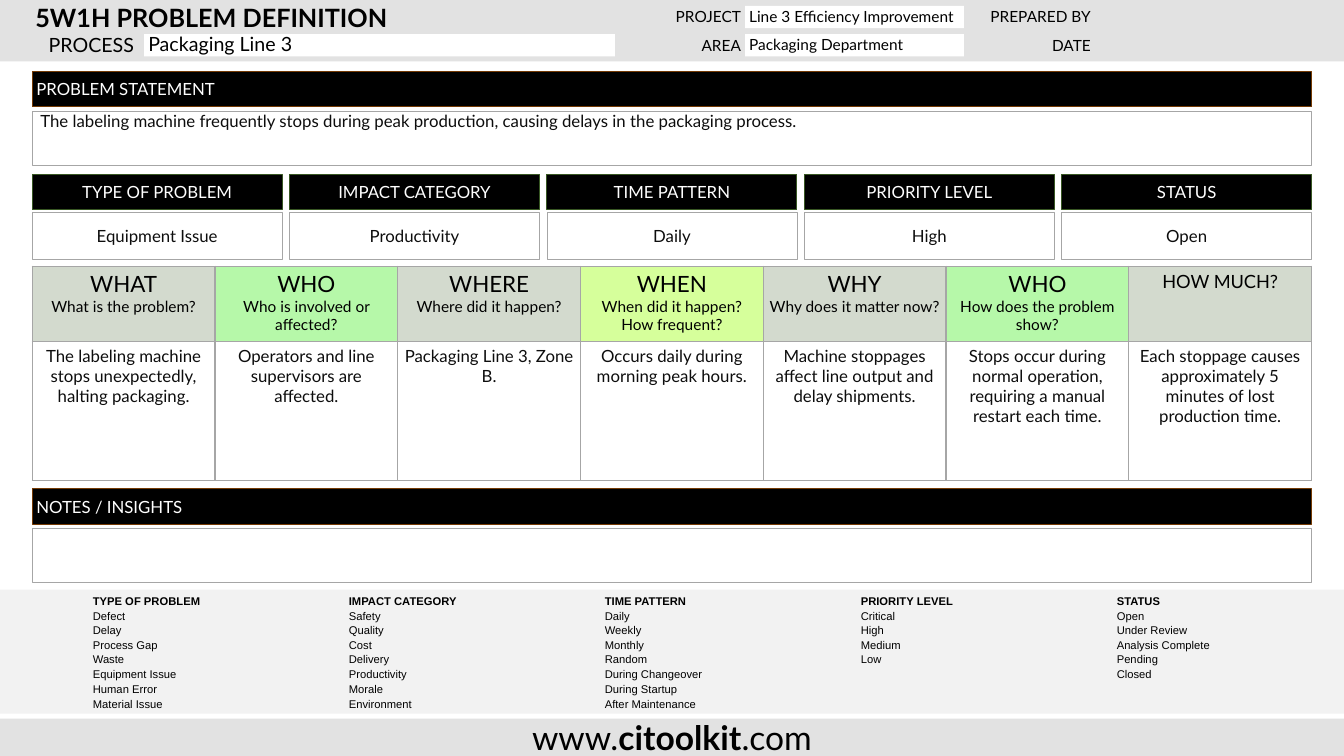
from itertools import zip_longest
from lxml.etree import SubElement
from pptx import Presentation
from pptx.dml.color import RGBColor
from pptx.enum.shapes import MSO_SHAPE as Shape
from pptx.enum.text import MSO_ANCHOR as Anchor, PP_ALIGN as Align
from pptx.oxml.ns import qn
from pptx.util import Inches, Pt

BLACK = RGBColor(0, 0, 0)
WHITE = RGBColor(255, 255, 255)
INK = RGBColor(0x0D, 0x0D, 0x0D)
BAND = RGBColor(0xE2, 0xE2, 0xE2)
PALE = RGBColor(0xF2, 0xF2, 0xF2)
GRAY = RGBColor(0xA6, 0xA6, 0xA6)
BROWN = RGBColor(0x74, 0x3A, 0x04)
PINE = RGBColor(0x38, 0x57, 0x23)
SAGE = RGBColor(0xD3, 0xDA, 0xCE)
MINT = RGBColor(0xB6, 0xF8, 0xA9)
LIME = RGBColor(0xD6, 0xFF, 0x9B)

WIDE, HIGH = Inches(13.33), Inches(7.5)
LEFT, SPAN = 2.4, 95.2
PLAIN = "{2D5ABB26-0587-4C30-8999-92F81FD0307C}"

FIELDS = [
    ("TYPE OF PROBLEM", "Equipment Issue"),
    ("IMPACT CATEGORY", "Productivity"),
    ("TIME PATTERN", "Daily"),
    ("PRIORITY LEVEL", "High"),
    ("STATUS", "Open"),
]
ASKS = [
    (SAGE, "WHAT", "What is the problem?",
     "The labeling machine stops unexpectedly, halting packaging."),
    (MINT, "WHO", "Who is involved or affected?",
     "Operators and line supervisors are affected."),
    (SAGE, "WHERE", "Where did it happen?", "Packaging Line 3, Zone B."),
    (LIME, "WHEN", "When did it happen? How frequent?",
     "Occurs daily during morning peak hours."),
    (SAGE, "WHY", "Why does it matter now?",
     "Machine stoppages affect line output and delay shipments."),
    (MINT, "WHO", "How does the problem show?",
     "Stops occur during normal operation, requiring a manual restart each time."),
    (SAGE, "HOW MUCH?", "",
     "Each stoppage causes approximately 5 minutes of lost production time."),
]
LISTS = [
    ["Defect", "Delay", "Process Gap", "Waste", "Equipment Issue",
     "Human Error", "Material Issue"],
    ["Safety", "Quality", "Cost", "Delivery", "Productivity", "Morale",
     "Environment"],
    ["Daily", "Weekly", "Monthly", "Random", "During Changeover",
     "During Startup", "After Maintenance"],
    ["Critical", "High", "Medium", "Low"],
    ["Open", "Under Review", "Analysis Complete", "Pending", "Closed"],
]


def across(share):
    return round(WIDE * share / 100)


def down(share):
    return round(HIGH * share / 100)


def place(x, y, w, h):
    return across(x), down(y), across(w), down(h)


def inset(frame, left, top, right, base):
    frame.margin_left, frame.margin_top = Inches(left), Inches(top)
    frame.margin_right, frame.margin_bottom = Inches(right), Inches(base)


def style(para, size, color=BLACK, align=Align.LEFT, bold=False, face="Lato"):
    para.alignment = align
    for run in para.runs:
        font = run.font
        font.name, font.size, font.bold = face, Pt(size), bold
        font.color.rgb = color


def panel(slide, spot, fill, edge=None, width=0.75, clear=False):
    shape = slide.shapes.add_shape(Shape.RECTANGLE, *place(*spot))
    shape.shadow.inherit = False
    shape.fill.solid()
    shape.fill.fore_color.rgb = fill
    if clear:
        tone = shape.fill._xPr.find(qn("a:solidFill"))[0]
        SubElement(tone, qn("a:alpha"), val="20000")
    if edge is None:
        shape.line.fill.background()
    else:
        shape.line.color.rgb = edge
        shape.line.width = Pt(width)
    return shape


def write(shape, text, size, color=BLACK, align=Align.LEFT, bold=False):
    frame = shape.text_frame
    frame.word_wrap = True
    frame.vertical_anchor = Anchor.MIDDLE
    inset(frame, 0.04, 0.04, 0.04, 0.04)
    frame.text = text
    style(frame.paragraphs[0], size, color, align, bold)
    return frame


def label(slide, spot, text, size, align=Align.RIGHT, bold=False):
    box = slide.shapes.add_textbox(*place(*spot))
    write(box, text, size, align=align, bold=bold)


def entry(slide, spot, text, size):
    frame = write(panel(slide, spot, WHITE), text, size)
    frame.paragraphs[0].line_spacing = 0.9


def title(slide, spot, text, edge, align=Align.LEFT):
    write(panel(slide, spot, BLACK, edge), text, 12, WHITE, align)


def field(slide, spot):
    return panel(slide, spot, WHITE, GRAY, 0.5, True)


def grid(slide, x, y, cols, rows):
    spot = place(x, y, sum(cols), sum(rows))
    table = slide.shapes.add_table(len(rows), len(cols), *spot).table
    table.first_row = table.horz_banding = False
    table._tbl.tblPr.find(qn("a:tableStyleId")).text = PLAIN
    for col, share in zip(table.columns, cols):
        col.width = across(share)
    for row, share in zip(table.rows, rows):
        row.height = down(share)
    return table


def border(cell):
    props = cell._tc.get_or_add_tcPr()
    for n, side in enumerate(("lnL", "lnR", "lnT", "lnB")):
        line = props.makeelement(qn("a:" + side), {"w": "12700"})
        fill = SubElement(line, qn("a:solidFill"))
        SubElement(fill, qn("a:srgbClr"), val=str(GRAY))
        props.insert(n, line)


def block(cell, fill, text):
    inset(cell, 0.04, 0.04, 0.04, 0.04)
    cell.fill.solid()
    cell.fill.fore_color.rgb = fill
    border(cell)
    cell.text_frame.text = text
    return cell.text_frame.paragraphs[0]


def asks(slide):
    table = grid(slide, LEFT, 35.2, [SPAN / 7] * 7, [10, 18.4])
    for n, (fill, word, hint, reply) in enumerate(ASKS):
        head = table.cell(0, n)
        style(block(head, fill, word), 16 if hint else 13, align=Align.CENTER)
        if hint:
            para = head.text_frame.add_paragraph()
            para.text = hint
            style(para, 11, align=Align.CENTER)
        style(block(table.cell(1, n), WHITE, reply), 12, INK, Align.CENTER)


def choices(slide):
    table = grid(slide, 6.83, 78.53, [19.05] * 4 + [10.2], [1.83] * 5 + [2] * 3)
    heads = [name for name, _ in FIELDS]
    for r, row in enumerate([heads, *zip_longest(*LISTS, fillvalue="")]):
        for c, text in enumerate(row):
            cell = table.cell(r, c)
            inset(cell, 0.01, 0.01, 0.01, 0)
            cell.vertical_anchor = Anchor.BOTTOM
            cell.fill.background()
            para = cell.text_frame.paragraphs[0]
            para.text = text
            style(para, 8, bold=r == 0, face="Arial")
            if not text:
                SubElement(para._p, qn("a:endParaRPr"), sz="800")


def header(slide):
    panel(slide, (0, 0, 100, 8.13), BAND)
    label(slide, (2.33, 0, 43.44, 4.53), "5W1H PROBLEM DEFINITION", 18,
          Align.LEFT, True)
    label(slide, (1.13, 4.4, 9.15, 3.07), "PROCESS", 14)
    entry(slide, (10.73, 4.53, 35.03, 2.93), "Packaging Line 3", 14)
    rows = [("PROJECT", "Line 3 Efficiency Improvement", "PREPARED BY"),
            ("AREA", "Packaging Department", "DATE")]
    for n, (name, value, sign) in enumerate(rows):
        y = 0.67 + 3.73 * n
        label(slide, (46.29, y, 9.15, 3.07), name, 11)
        entry(slide, (55.44, y + 0.13, 16.28, 2.93), value, 11)
        label(slide, (72.32, y, 9.15, 3.07), sign, 11)


def footer(slide):
    band = panel(slide, (0, 95.07, 100, 4.93), BAND)
    frame = write(band, "www.", 24)
    para = frame.paragraphs[0]
    for part in ("citoolkit", ".com"):
        para.add_run().text = part
    style(para, 24, align=Align.CENTER)
    para.runs[1].font.bold = True


def main():
    deck = Presentation()
    deck.slide_width, deck.slide_height = WIDE, HIGH
    slide = deck.slides.add_slide(deck.slide_layouts[6])
    header(slide)
    footer(slide)
    asks(slide)
    panel(slide, (0, 78, 100, 16.4), PALE)
    title(slide, (LEFT, 9.47, SPAN, 4.67), "PROBLEM STATEMENT", BROWN)
    frame = write(field(slide, (LEFT, 14.67, SPAN, 7.2)),
                  "The labeling machine frequently stops during peak production, "
                  "causing delays in the packaging process.", 12, INK)
    frame.vertical_anchor = Anchor.TOP
    inset(frame, 0.08, 0, 0.04, 0)
    for n, (name, value) in enumerate(FIELDS):
        x = LEFT + 19.15 * n
        title(slide, (x, 23.07, 18.6, 4.67), name, PINE, Align.CENTER)
        write(field(slide, (x, 28.13, 18.6, 6.13)), value, 12, INK, Align.CENTER)
    title(slide, (LEFT, 64.67, SPAN, 4.67), "NOTES / INSIGHTS", BROWN)
    field(slide, (LEFT, 69.87, SPAN, 7.2))
    choices(slide)
    deck.save("out.pptx")


if __name__ == "__main__":
    main()
